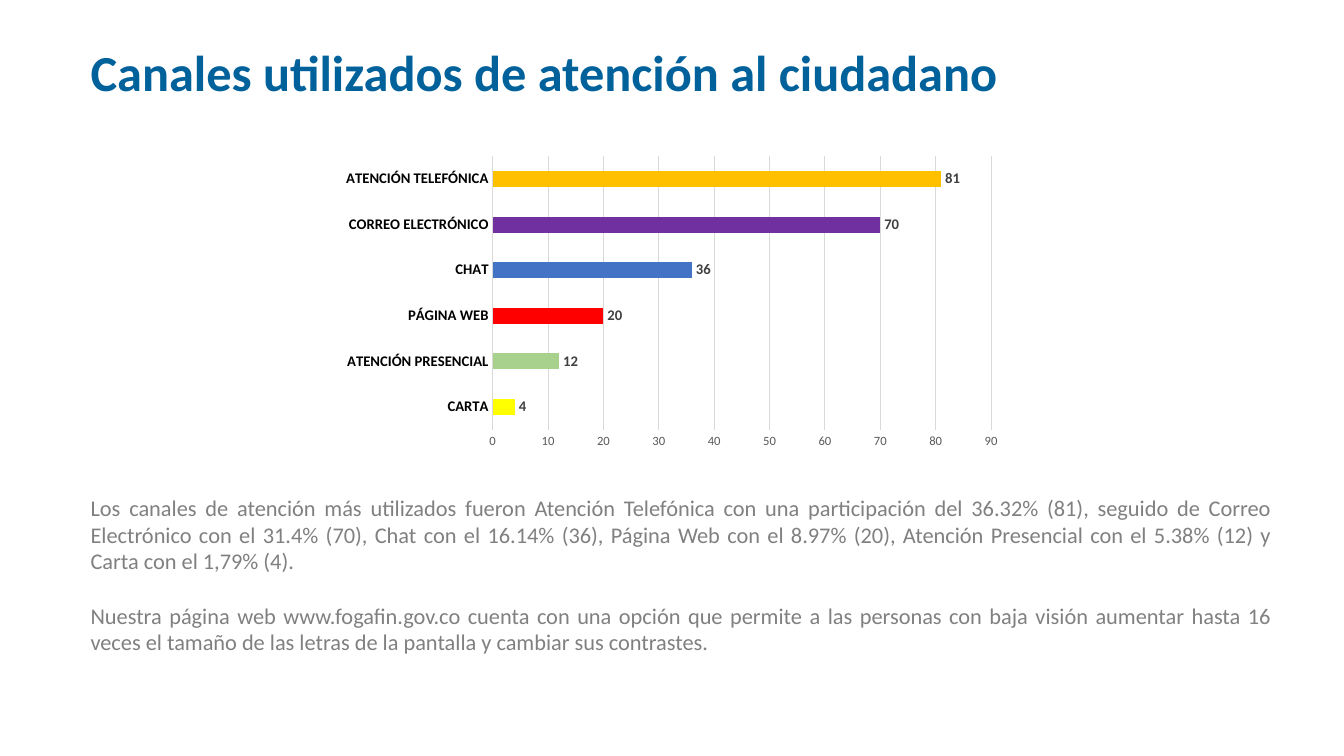
from pptx import Presentation
from pptx import util as u
from pptx.chart.data import CategoryChartData
from pptx.dml.color import RGBColor
from pptx.enum import chart as ch, text

COLORS = {
    "title": "01619B", "body": "808080", "grid": "D9D9D9", "bar": "5B9BD5",
    "category": "000000", "scale": "595959", "value": "404040",
}
CHANNELS = [
    ("CARTA", 4, "FFFF00"),
    ("ATENCIÓN PRESENCIAL", 12, "A9D18E"),
    ("PÁGINA WEB", 20, "FF0000"),
    ("CHAT", 36, "4472C4"),
    ("CORREO ELECTRÓNICO", 70, "7030A0"),
    ("ATENCIÓN TELEFÓNICA", 81, "FFC000"),
]
BODY = [
    "Los canales de atención más utilizados fueron Atención Telefónica con una "
    "participación del 36.32% (81), seguido de Correo Electrónico con el 31.4% (70), "
    "Chat con el 16.14% (36), Página Web con el 8.97% (20), Atención Presencial con "
    "el 5.38% (12) y Carta con el 1,79% (4).",
    "Nuestra página web www.fogafin.gov.co cuenta con una opción que permite a las "
    "personas con baja visión aumentar hasta 16 veces el tamaño de las letras de la "
    "pantalla y cambiar sus contrastes.",
]


def style(font, size, color, bold=False):
    font.name = "Calibri"
    font.size = u.Pt(size)
    font.bold = bold
    font.color.rgb = RGBColor.from_string(COLORS[color])


def add_box(page, left, top, width, height, anchor):
    box = page.shapes.add_textbox(u.Pt(left), u.Pt(top), u.Pt(width), u.Pt(height))
    box.text_frame.word_wrap = True
    box.text_frame.vertical_anchor = anchor
    return box.text_frame


deck = Presentation()
deck.slide_width, deck.slide_height = u.Pt(960), u.Pt(540)
page = deck.slides.add_slide(deck.slide_layouts[6])

title = add_box(page, 57.6, 14.4, 762.5, 78.5, text.MSO_ANCHOR.MIDDLE).paragraphs[0]
title.text = "Canales utilizados de atención al ciudadano"
title.line_spacing = 0.9
style(title.font, 36, "title", True)

body = add_box(page, 57.6, 349.2, 858.2, 123.8, text.MSO_ANCHOR.TOP)
for index, wording in enumerate(BODY):
    para = body.add_paragraph() if index else body.paragraphs[0]
    para.text = wording
    para.alignment = text.PP_ALIGN.JUSTIFY
    para.space_before = u.Pt(19.5 if index else 0)
    style(para.font, 16, "body")

data = CategoryChartData()
data.categories = [name for name, count, color in CHANNELS]
data.add_series("Series 1", [count for name, count, color in CHANNELS])
chart = page.shapes.add_chart(
    ch.XL_CHART_TYPE.BAR_CLUSTERED,
    u.Pt(237.6), u.Pt(107.3), u.Pt(484.6), u.Pt(217.4), data,
).chart
chart.has_legend = False
chart.has_title = False
style(chart.font, 10, "category")

channel_axis, count_axis = chart.category_axis, chart.value_axis
for axis in (channel_axis, count_axis):
    axis.major_tick_mark = axis.minor_tick_mark = ch.XL_TICK_MARK.NONE
style(channel_axis.tick_labels.font, 10.5, "category", True)
style(count_axis.tick_labels.font, 9, "scale")
channel_axis.has_major_gridlines = False
count_axis.has_major_gridlines = True
count_axis.minimum_scale, count_axis.maximum_scale, count_axis.major_unit = 0, 90, 10
count_axis.format.line.fill.background()
for line in (channel_axis.format.line, count_axis.major_gridlines.format.line):
    line.width = u.Pt(0.75)
    line.color.rgb = RGBColor.from_string(COLORS["grid"])

plot = chart.plots[0]
plot.gap_width = 182
plot.vary_by_categories = False
series = plot.series[0]
series.format.fill.solid()
series.format.fill.fore_color.rgb = RGBColor.from_string(COLORS["bar"])
for index, (name, count, color) in enumerate(CHANNELS):
    fill = series.points[index].format.fill
    fill.solid()
    fill.fore_color.rgb = RGBColor.from_string(color)
labels = series.data_labels
labels.show_value = True
labels.position = ch.XL_LABEL_POSITION.OUTSIDE_END
style(labels.font, 10.5, "value", True)

deck.save("out.pptx")
